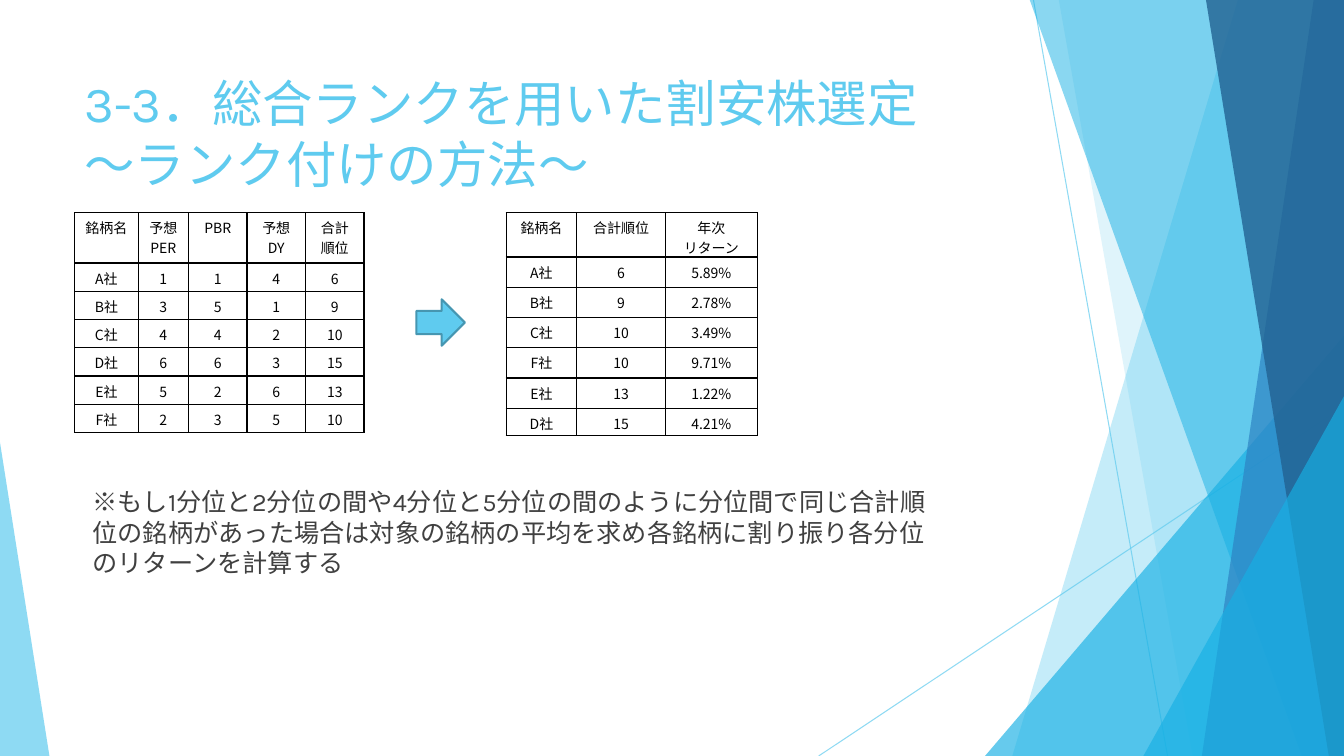
from lxml import etree
from pptx import Presentation
from pptx.dml.color import RGBColor
from pptx.enum import shapes, text
from pptx.oxml.ns import qn
from pptx.util import Inches, Pt


def paint(sp, color, alpha=100):
    """Colour a borderless shape, or a connector's line, with alpha in percent."""
    if hasattr(sp, "fill"):
        sp.shadow.inherit = False
        sp.fill.solid()
        sp.fill.fore_color.rgb = RGBColor.from_string(color)
        sp.line.fill.background()
    else:
        sp.line.color.rgb = RGBColor.from_string(color)
        etree.SubElement(sp._element.spPr, qn("a:effectLst"))
    if alpha < 100:
        for clr in sp._element.iter(qn("a:srgbClr")):
            etree.SubElement(clr, qn("a:alpha"), val=str(alpha * 1000))


def write(tf, lines, font, size, color, align=None):
    """Fill a text frame with one paragraph per line."""
    for i, line in enumerate(lines):
        p = tf.paragraphs[0] if i == 0 else tf.add_paragraph()
        p.alignment = align
        r = p.add_run()
        r.text = line
        for name, value in {"name": font, "size": Pt(size)}.items():
            setattr(r.font, name, value)
        r.font.color.rgb = RGBColor.from_string(color)
        etree.SubElement(r._r.get_or_add_rPr(), qn("a:ea"), typeface=font)


prs = Presentation()
prs.slide_width, prs.slide_height = Inches(13.33), Inches(7.5)
slide = prs.slides.add_slide(prs.slide_layouts[6])

# Decorative facets, back to front
for x1, y1, x2, y2 in [(10.25, 0, 11.58, 7.5), (13.33, 4.03, 8.12, 7.5)]:
    line = slide.shapes.add_connector(
        shapes.MSO_CONNECTOR.STRAIGHT, *map(Inches, (x1, y1, x2, y2)))
    line.line.width = Pt(0.75)
    paint(line, "5FCBEF", 70)

# A band is (top x, bottom x, colour, alpha) and reaches the right edge;
# a triangle is (left, top, width, height, apex, colour, alpha).
facets = [
    (12.28, 10.04, "5FCBEF", 36),
    (10.5, 11.83, "5FCBEF", 20),
    (9.77, 3.33, 3.56, 4.17, 1, "17B0E4", 66),
    (10.21, 12.91, "17B0E4", 50),
    (13.03, 11.92, "2E83C3", 70),
    (11.96, 13.18, "226292", 80),
    (11.34, 3.93, 1.99, 3.57, 1, "17B0E4", 66),
    (0, 4.39, 0.49, 3.11, 0, "5FCBEF", 70),
]
for *geometry, color, alpha in facets:
    if len(geometry) == 2:
        top_x, bottom_x = geometry
        outline = slide.shapes.build_freeform(Inches(top_x), Inches(-0.01))
        corners = [(13.33, -0.01), (13.33, 7.5), (bottom_x, 7.5)]
        outline.add_line_segments([(Inches(x), Inches(y)) for x, y in corners])
        sp = outline.convert_to_shape()
    else:
        *box, apex = geometry
        sp = slide.shapes.add_shape(
            shapes.MSO_SHAPE.ISOSCELES_TRIANGLE, *map(Inches, box))
        sp.adjustments[0] = apex
    paint(sp, color, alpha)

# Title and note
texts = [
    ((0.74, 0.67, 9.4, 1.44), 36, "5FCBEF",
     ["3-3．総合ランクを用いた割安株選定", "～ランク付けの方法～"]),
    ((0.82, 4.78, 8.66, 1.01), 18, "404040",
     ["※もし1分位と2分位の間や4分位と5分位の間のように分位間で同じ合計順位の銘柄があった場合は"
      "対象の銘柄の平均を求め各銘柄に割り振り各分位のリターンを計算する"]),
]
for box, size, color, lines in texts:
    tf = slide.shapes.add_textbox(*map(Inches, box)).text_frame
    tf.word_wrap = True
    write(tf, lines, "Karla", size, color)

# Ranking tables: (left, column widths, row heights, rows)
tables = [
    (0.74, [0.63, 0.5, 0.58, 0.58, 0.58], [0.5] + [0.28] * 6, [
        ["銘柄名", "予想PER", "PBR", "予想DY", "合計順位"],
        ["A社", "1", "1", "4", "6"],
        ["B社", "3", "5", "1", "9"],
        ["C社", "4", "4", "2", "10"],
        ["D社", "6", "6", "3", "15"],
        ["E社", "5", "2", "6", "13"],
        ["F社", "2", "3", "5", "10"],
    ]),
    (5.02, [0.7, 0.88, 0.91], [0.44] + [0.3] * 5 + [0.26], [
        ["銘柄名", "合計順位", "年次\nリターン"],
        ["A社", "6", "5.89%"],
        ["B社", "9", "2.78%"],
        ["C社", "10", "3.49%"],
        ["F社", "10", "9.71%"],
        ["E社", "13", "1.22%"],
        ["D社", "15", "4.21%"],
    ]),
]
for left, widths, heights, rows in tables:
    table = slide.shapes.add_table(
        len(rows), len(widths), Inches(left), Inches(2.11),
        Inches(sum(widths)), Inches(sum(heights))).table
    table.first_row = table.horz_banding = False
    for column, width in zip(table.columns, widths):
        column.width = Inches(width)
    for row, height, values in zip(table.rows, heights, rows):
        row.height = Inches(height)
        for cell, value in zip(row.cells, values):
            write(cell.text_frame, value.split("\n"), "Noto Sans CJK JP", 10,
                  "000000", text.PP_ALIGN.CENTER)
            tcPr = cell._tc.get_or_add_tcPr()
            for side in ("lnL", "lnR", "lnT", "lnB"):
                ln = etree.SubElement(tcPr, qn(f"a:{side}"), w=str(Pt(1)))
                ink = etree.SubElement(ln, qn("a:solidFill"))
                etree.SubElement(ink, qn("a:srgbClr"), val="000000")
            cell.fill.background()

arrow = slide.shapes.add_shape(
    shapes.MSO_SHAPE.RIGHT_ARROW, *map(Inches, (4.13, 2.97, 0.48, 0.46)))
paint(arrow, "5FCBEF")
arrow.line.color.rgb = RGBColor.from_string("4696B1")
arrow.line.width = Pt(1.5)

prs.save("out.pptx")
